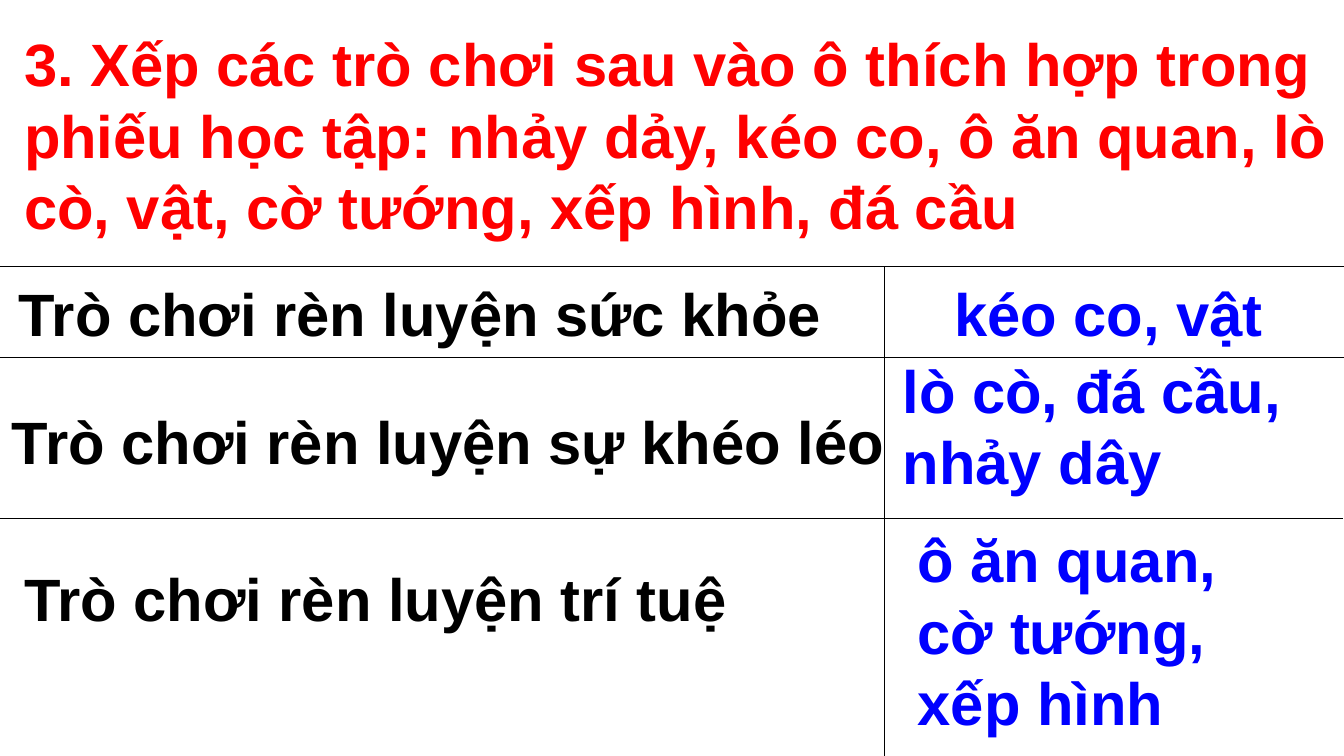
from lxml import etree
from pptx import Presentation
from pptx.dml.color import RGBColor
from pptx.enum.shapes import MSO_CONNECTOR
from pptx.enum.text import MSO_AUTO_SIZE
from pptx.oxml.ns import qn
from pptx.util import Pt

LINE = MSO_CONNECTOR.STRAIGHT
GROW = MSO_AUTO_SIZE.SHAPE_TO_FIT_TEXT
BLACK, RED, BLUE = "000000", "FF0000", "0000FF"


def paint(code):
    return RGBColor.from_string(code)


class Sheet:
    """Holds the text style and the current slide."""

    font = "Arial"
    size = 32
    rule = 0.5

    def __init__(self, slide):
        self.slide = slide

    def text(self, words, left, top, width, height, color, wrap=False):
        box = self.slide.shapes.add_textbox(Pt(left), Pt(top), Pt(width), Pt(height))
        frame = box.text_frame
        frame.text = words
        frame.word_wrap = wrap
        frame.auto_size = GROW
        for para in frame.paragraphs:
            for run in para.runs:
                run.font.name = self.font
                run.font.size = Pt(self.size)
                run.font.bold = True
                run.font.color.rgb = paint(color)

    def line(self, x1, y1, x2, y2):
        link = self.slide.shapes.add_connector(LINE, Pt(x1), Pt(y1), Pt(x2), Pt(y2))
        link.line.width = Pt(self.rule)
        link.line.color.rgb = paint(BLACK)
        etree.SubElement(link._element.spPr, qn("a:effectLst"))


def main():
    deck = Presentation()
    deck.slide_width, deck.slide_height = Pt(720), Pt(405)
    sheet = Sheet(deck.slides.add_slide(deck.slide_layouts[6]))

    title = (
        "3. Xếp các trò chơi sau vào ô thích hợp trong phiếu học tập: "
        "nhảy dảy, kéo co, ô ăn quan, lò cò, vật, cờ tướng, xếp hình, đá cầu"
    )
    sheet.text(title, 5.8, 10.8, 714.2, 124, RED, wrap=True)

    skills = [
        ("Trò chơi rèn luyện sức khỏe", 2.9, 144.7, 448),
        ("Trò chơi rèn luyện sự khéo léo", -0.7, 213.1, 485),
        ("Trò chơi rèn luyện trí tuệ", 5.8, 297.4, 412),
    ]
    for words, left, top, width in skills:
        sheet.text(words, left, top, width, 46, BLACK)

    for left, right, y in [(-0.7, 720.7, 142.6), (0, 722, 191.5), (-2.9, 719.3, 277.9)]:
        sheet.line(left, y, right, y)
    sheet.line(473.8, 405, 473.8, 142.6)

    games = [
        ("kéo co, vật", 504, 144.7, 181.4, 46),
        ("lò cò, đá cầu,\nnhảy dây", 476.6, 185.8, 227.5, 85),
        ("ô ăn quan,\ncờ tướng,\nxếp hình", 484.6, 276.5, 185, 124),
    ]
    for words, *place in games:
        sheet.text(words, *place, BLUE)

    deck.save("out.pptx")


if __name__ == "__main__":
    main()
